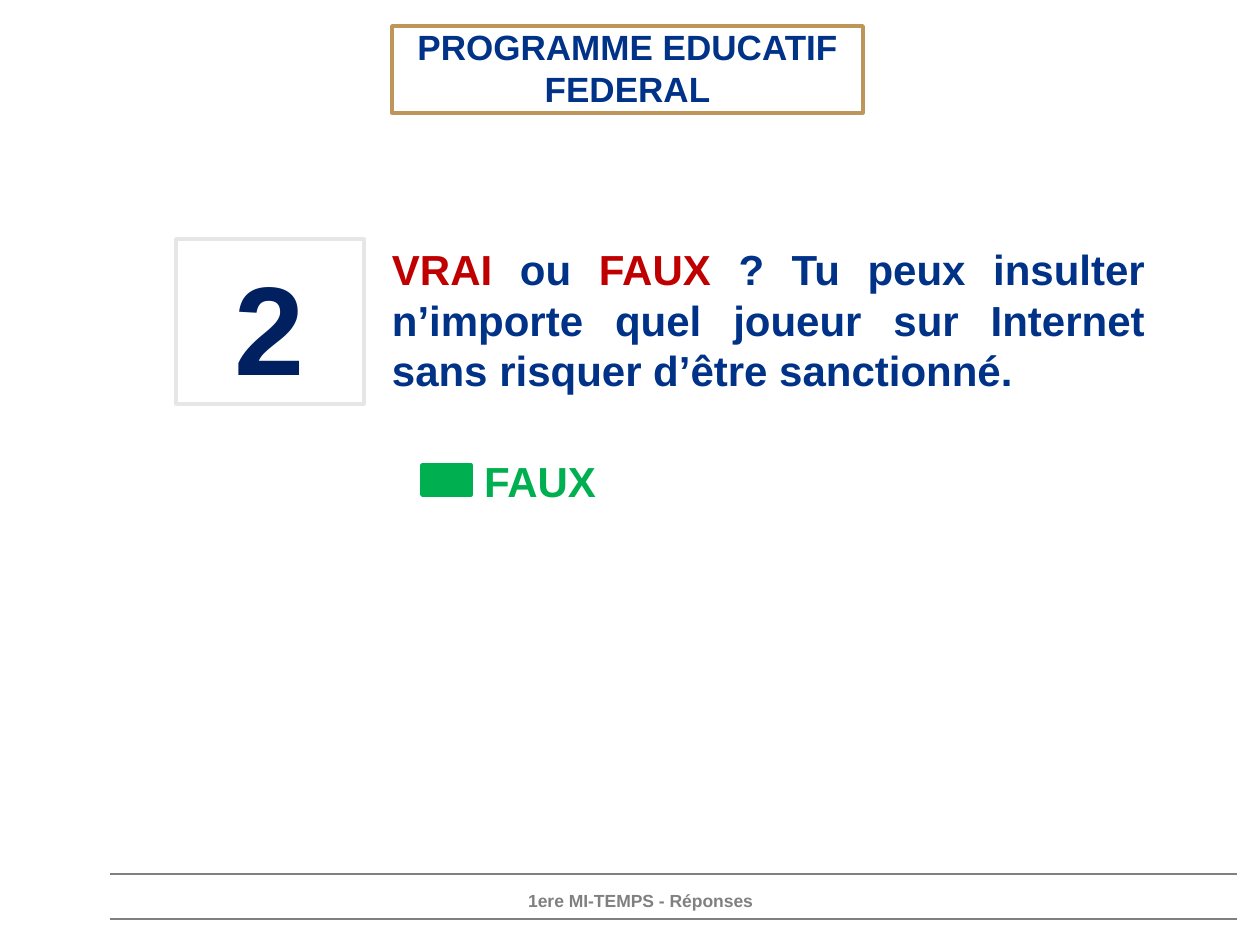
from lxml import etree
from pptx import Presentation
from pptx.dml.color import RGBColor
from pptx.enum.shapes import MSO_CONNECTOR, MSO_SHAPE
from pptx.enum.text import MSO_ANCHOR, PP_ALIGN
from pptx.oxml.ns import qn
from pptx.util import Emu, Pt

RECTANGLE = MSO_SHAPE.RECTANGLE
STRAIGHT = MSO_CONNECTOR.STRAIGHT
TOP, BOTTOM = MSO_ANCHOR.TOP, MSO_ANCHOR.BOTTOM
LEFT, CENTER, JUSTIFY = PP_ALIGN.LEFT, PP_ALIGN.CENTER, PP_ALIGN.JUSTIFY

WHITE, BLUE, NAVY, RED = "FFFFFF", "003287", "002060", "C00000"
GREEN, GOLD, GRAY, PALE = "00B050", "BE965A", "808080", "E6E6E6"


def px(length):
    return Emu(round(length * 914400 / 126))


def color(code):
    return RGBColor.from_string(code)


class Page:
    font = "Arial"
    border = Pt(2)
    rule_width = Pt(0.75)

    def __init__(self, deck):
        self.slide = deck.slides.add_slide(deck.slide_layouts[6])

    def rule(self, left, right, y):
        line = self.slide.shapes.add_connector(STRAIGHT, px(left), px(y), px(right), px(y))
        line.line.color.rgb = color(GRAY)
        line.line.width = self.rule_width
        etree.SubElement(line._element.spPr, qn("a:effectLst"))

    def panel(self, place, fill, outline):
        box = self.slide.shapes.add_shape(RECTANGLE, *map(px, place))
        box.shadow.inherit = False
        box.fill.solid()
        box.fill.fore_color.rgb = color(fill)
        box.line.color.rgb = color(outline)
        box.line.width = self.border
        return box

    def label(self, place):
        return self.slide.shapes.add_textbox(*map(px, place))

    def fill_text(self, box, spans, size, align, anchor=TOP, bottom=0):
        frame = box.text_frame
        layout = {"word_wrap": True, "vertical_anchor": anchor, "margin_left": 0,
                  "margin_right": 0, "margin_top": 0, "margin_bottom": px(bottom)}
        for name, value in layout.items():
            setattr(frame, name, value)
        para = frame.paragraphs[0]
        para.alignment = align
        for text, code in spans:
            span = para.add_run()
            span.text = text
            for name, value in {"name": self.font, "size": Pt(size), "bold": True}.items():
                setattr(span.font, name, value)
            span.font.color.rgb = color(code)


def main():
    deck = Presentation()
    deck.slide_width, deck.slide_height = px(1260), px(945)
    page = Page(deck)

    for y in (874, 919):
        page.rule(110, 1237, y)

    title = page.panel((392, 26, 471, 87), WHITE, GOLD)
    page.fill_text(title, [("PROGRAMME EDUCATIF FEDERAL", BLUE)], 20, CENTER)

    question = page.label((392, 244, 753, 161))
    page.fill_text(question, [
        ("VRAI", RED),
        (" ou ", BLUE),
        ("FAUX", RED),
        (" ? Tu peux insulter n’importe quel joueur sur Internet "
         "sans risquer d’être sanctionné.", BLUE),
    ], 24, JUSTIFY)

    number = page.panel((176, 239, 188, 165), WHITE, PALE)
    page.fill_text(number, [("2", NAVY)], 72, CENTER, BOTTOM, 3)

    answer = page.panel((484, 456, 461, 161), WHITE, WHITE)
    page.fill_text(answer, [("FAUX", GREEN)], 24, LEFT)
    page.panel((422, 465, 49, 30), GREEN, GREEN)

    footer = page.label((333, 890, 615, 25))
    page.fill_text(footer, [("1ere MI-TEMPS - Réponses", GRAY)], 10, CENTER)

    deck.save("out.pptx")


if __name__ == "__main__":
    main()
